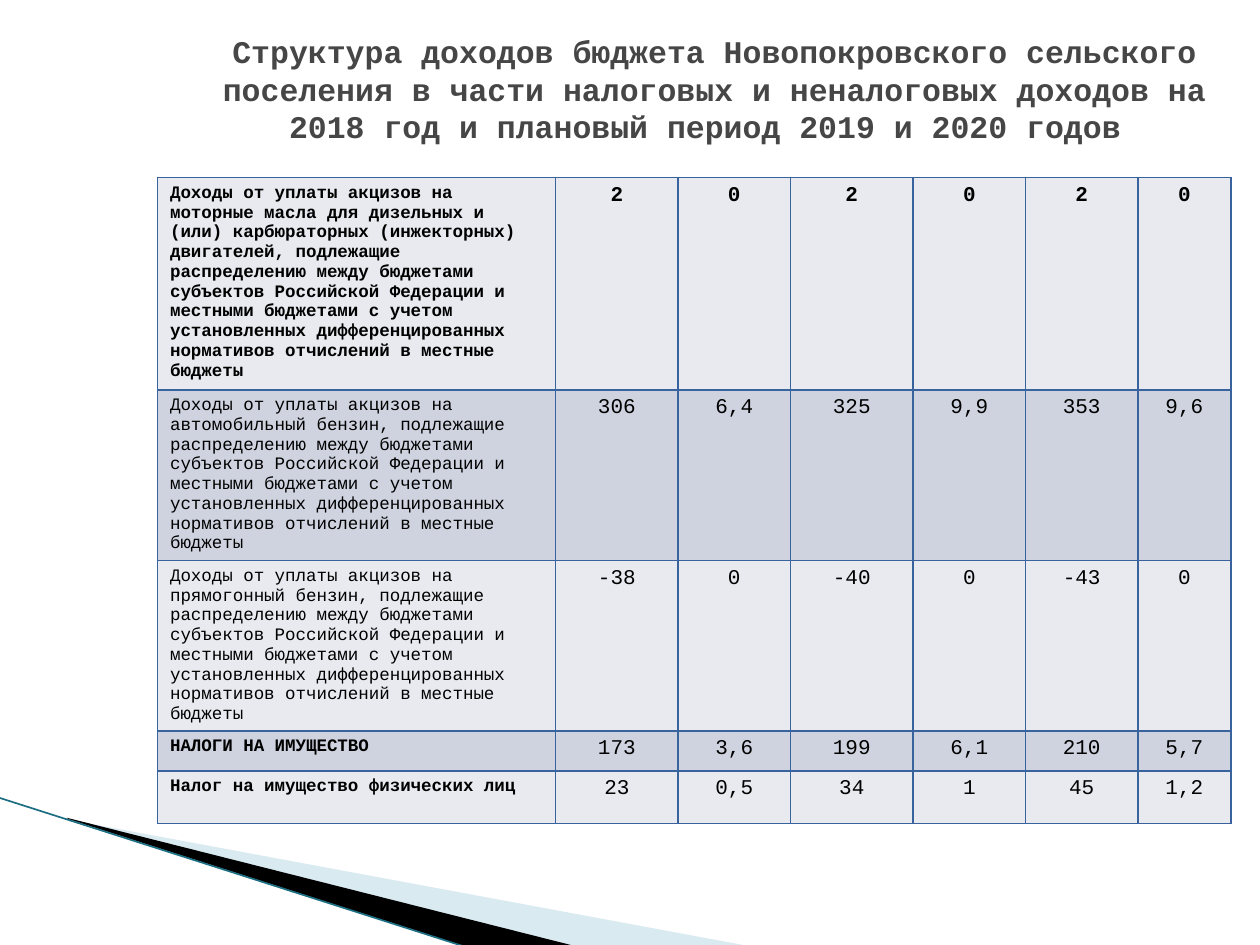
from dataclasses import dataclass

from lxml import etree
from pptx import Presentation
from pptx.dml.color import RGBColor
from pptx.enum.shapes import MSO_CONNECTOR
from pptx.enum.text import MSO_ANCHOR, PP_ALIGN
from pptx.oxml.ns import qn
from pptx.util import Pt

CENTER, LEFT = PP_ALIGN.CENTER, PP_ALIGN.LEFT
MIDDLE = MSO_ANCHOR.MIDDLE
STRAIGHT = MSO_CONNECTOR.STRAIGHT
TITLE_ONLY = 5


@dataclass(frozen=True)
class Theme:
    font: str = "Courier New"
    title_size: float = 18
    title_leading: float = 21.5
    label_size: float = 10
    value_size: float = 12
    title: str = "464646"
    text: str = "000000"
    border: str = "39639D"
    bands: tuple[str, str] = ("E8EAEF", "CED3DF")
    pale: str = "A0CBDC"
    dark: str = "000000"
    stripe: str = "1C6E82"


@dataclass(frozen=True)
class IncomeRow:
    label: str
    values: tuple[str, ...]
    height: float
    bold_label: bool = False
    bold_values: bool = False


@dataclass(frozen=True)
class Wedge:
    frame: tuple[float, float, float, float]
    points: tuple[tuple[float, float], ...]
    color: str
    opacity: int = 100


THEME = Theme()
TITLE = ("Структура доходов бюджета Новопокровского сельского поселения в части "
         "налоговых и неналоговых доходов на 2018 год и плановый период 2019 и 2020 годов ")
EXCISE = "Доходы от уплаты акцизов на "
SHARED = (", подлежащие распределению между бюджетами субъектов Российской Федерации "
          "и местными бюджетами с учетом установленных дифференцированных нормативов "
          "отчислений в местные бюджеты")
ROWS = (
    IncomeRow(EXCISE + "моторные масла для дизельных и (или) карбюраторных "
              "(инжекторных) двигателей" + SHARED,
              ("2", "0", "2", "0", "2", "0"), 121.3, True, True),
    IncomeRow(EXCISE + "автомобильный бензин" + SHARED,
              ("306", "6,4", "325", "9,9", "353", "9,6"), 97.5),
    IncomeRow(EXCISE + "прямогонный бензин" + SHARED,
              ("-38", "0", "-40", "0", "-43", "0"), 97.5),
    IncomeRow("НАЛОГИ НА ИМУЩЕСТВО",
              ("173", "3,6", "199", "6,1", "210", "5,7"), 22.7, True),
    IncomeRow("Налог на имущество физических лиц",
              ("23", "0,5", "34", "1", "45", "1,2"), 30, True),
)
COL_WIDTHS = (227.5, 70, 64.2, 70.2, 64.2, 64.2, 53.2)
TABLE_LEFT, TABLE_TOP = 90, 101.5
WEDGES = (
    Wedge((56.2, 393.8, 299.5, 113.8),
          ((39.6, 468.5), (428.4, 540.7), (328.3, 540.7), (39.6, 468)), THEME.pale, 40),
    Wedge((-4.3, 455.8, 299.5, 66.2),
          ((38.2, 467.3), (329, 540.7), (267.8, 541.4), (38.9, 468)), THEME.dark),
)


def style_paragraph(p, size: float, color: str, bold: bool, align) -> None:
    p.alignment = align
    p.font.name = THEME.font
    p.font.size = Pt(size)
    p.font.bold = bold
    p.font.color.rgb = RGBColor.from_string(color)


def set_frame(sp, frame: tuple[float, float, float, float]) -> None:
    """Give a freeform another frame while its outline stays in place."""
    left, top, width, height = map(Pt, frame)
    dx, dy = sp.left - left, sp.top - top
    for pt in sp._element.iter(qn("a:pt")):
        pt.set("x", str(int(pt.get("x")) + dx))
        pt.set("y", str(int(pt.get("y")) + dy))
    outline = next(sp._element.iter(qn("a:path")))
    outline.set("w", str(width))
    outline.set("h", str(height))
    sp.left, sp.top, sp.width, sp.height = left, top, width, height


def add_wedge(s, wedge: Wedge) -> None:
    start, *rest = [(Pt(x), Pt(y)) for x, y in wedge.points]
    builder = s.shapes.build_freeform(*start)
    builder.add_line_segments(rest, close=True)
    sp = builder.convert_to_shape()
    set_frame(sp, wedge.frame)
    sp.shadow.inherit = False
    sp.line.fill.background()
    sp.fill.solid()
    sp.fill.fore_color.rgb = RGBColor.from_string(wedge.color)
    if wedge.opacity < 100:
        color = sp._element.spPr.find(qn("a:solidFill"))[0]
        etree.SubElement(color, qn("a:alpha"), val=str(wedge.opacity * 1000))


def add_stripe(s) -> None:
    line = s.shapes.add_connector(STRAIGHT, Pt(-0.7), Pt(455.8), Pt(267), Pt(541.4))
    line.line.width = Pt(0.95)
    line.line.color.rgb = RGBColor.from_string(THEME.stripe)
    etree.SubElement(line._element.spPr, qn("a:effectLst"))


def set_borders(cell) -> None:
    """Draw all four sides; the lines must precede the fill in tcPr."""
    tc_pr = cell._tc.get_or_add_tcPr()
    for i, side in enumerate(("lnL", "lnR", "lnT", "lnB")):
        ln = etree.Element(qn(f"a:{side}"), w=str(Pt(1)))
        fill = etree.SubElement(ln, qn("a:solidFill"))
        etree.SubElement(fill, qn("a:srgbClr"), val=THEME.border)
        tc_pr.insert(i, ln)


def fill_cell(cell, text: str, band: str, size: float, bold: bool, align) -> None:
    cell.text = text
    style_paragraph(cell.text_frame.paragraphs[0], size, THEME.text, bold, align)
    cell.fill.solid()
    cell.fill.fore_color.rgb = RGBColor.from_string(band)
    set_borders(cell)


def add_income_table(s) -> None:
    height = sum(row.height for row in ROWS)
    table = s.shapes.add_table(len(ROWS), len(COL_WIDTHS), Pt(TABLE_LEFT), Pt(TABLE_TOP),
                               Pt(sum(COL_WIDTHS)), Pt(height)).table
    table.first_row = table.horz_banding = False
    for column, width in zip(table.columns, COL_WIDTHS):
        column.width = Pt(width)
    for i, row in enumerate(ROWS):
        table.rows[i].height = Pt(row.height)
        band = THEME.bands[i % 2]
        fill_cell(table.cell(i, 0), row.label, band, THEME.label_size, row.bold_label, LEFT)
        for j, value in enumerate(row.values, start=1):
            fill_cell(table.cell(i, j), value, band, THEME.value_size,
                      row.bold_values, CENTER)


def set_title(s) -> None:
    sp = s.shapes.title
    sp.left, sp.top, sp.width, sp.height = Pt(113), Pt(0), Pt(590.4), Pt(101.5)
    tf = sp.text_frame
    tf.text = TITLE
    tf.word_wrap = True
    tf.vertical_anchor = MIDDLE
    p = tf.paragraphs[0]
    style_paragraph(p, THEME.title_size, THEME.title, True, CENTER)
    p.line_spacing = Pt(THEME.title_leading)


def main() -> None:
    prs = Presentation()
    prs.slide_width, prs.slide_height = Pt(720), Pt(540)
    s = prs.slides.add_slide(prs.slide_layouts[TITLE_ONLY])
    for wedge in WEDGES:
        add_wedge(s, wedge)
    add_stripe(s)
    add_income_table(s)
    set_title(s)
    prs.save("out.pptx")


if __name__ == "__main__":
    main()
